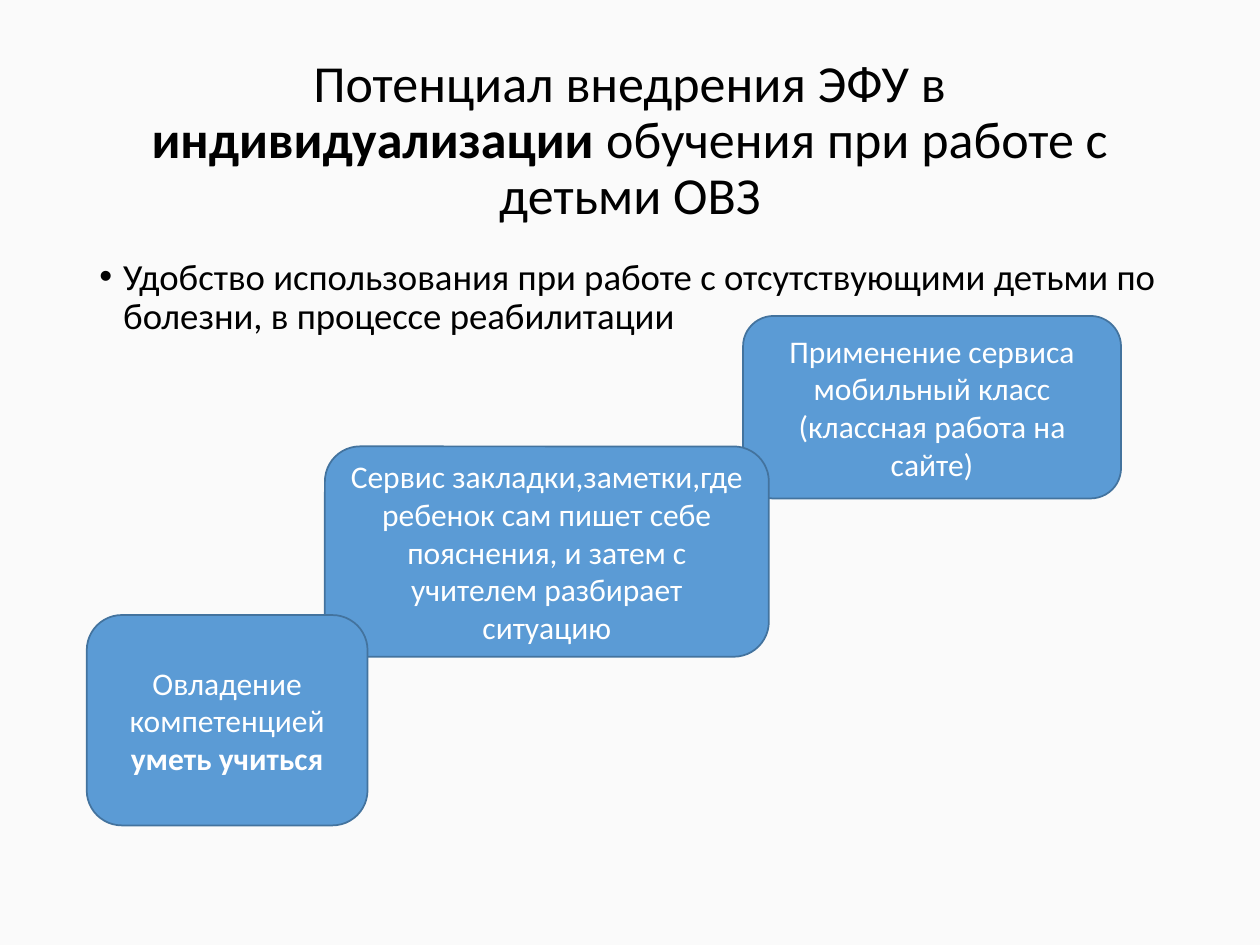
from dataclasses import dataclass

from lxml.etree import SubElement
from pptx import Presentation
from pptx.dml.color import RGBColor
from pptx.enum.shapes import MSO_SHAPE as Preset
from pptx.enum.text import MSO_ANCHOR as Anchor, MSO_AUTO_SIZE as AutoSize, PP_ALIGN as Align
from pptx.oxml.ns import qn
from pptx.util import Cm, Pt


@dataclass(frozen=True)
class Theme:
    font: str = "Calibri"
    background: RGBColor = RGBColor(0xFA, 0xFA, 0xFA)
    ink: RGBColor = RGBColor(0, 0, 0)
    step_fill: RGBColor = RGBColor(0x5B, 0x9B, 0xD5)
    step_line: RGBColor = RGBColor(0x43, 0x73, 0x9E)
    step_ink: RGBColor = RGBColor(0xFF, 0xFF, 0xFF)
    title_size: float = 29.7
    body_size: float = 21
    step_size: float = 18


@dataclass(frozen=True)
class Box:
    """Position and size in centimetres."""
    left: float
    top: float
    width: float
    height: float


@dataclass(frozen=True)
class Step:
    box: Box
    text: str
    emphasis: str = ""


THEME = Theme()
MARGIN = 1.75
CONTENT_WIDTH = 25.4 - 2 * MARGIN
BULLET_INDENT = 0.48

STEPS = [
    Step(Box(14.98, 6.37, 7.62, 3.68),
         "Применение сервиса мобильный класс (классная работа на сайте)"),
    Step(Box(6.55, 9, 8.95, 4.24),
         "Сервис закладки,заметки,где ребенок сам пишет себе пояснения, "
         "и затем с учителем разбирает ситуацию"),
    Step(Box(MARGIN, 12.4, 5.66, 4.24), "Овладение компетенцией ", "уметь учиться"),
]


def place(shape, box: Box) -> None:
    shape.left, shape.top = Cm(box.left), Cm(box.top)
    shape.width, shape.height = Cm(box.width), Cm(box.height)


def write(frame, parts: list[str], size: float, color: RGBColor, align: Align, anchor: Anchor):
    """Fill the frame with one paragraph in which every second part is bold."""
    frame.word_wrap = True
    frame.auto_size = AutoSize.NONE
    frame.vertical_anchor = anchor
    paragraph = frame.paragraphs[0]
    paragraph.alignment = align
    paragraph.space_before = Pt(0)
    for index, part in enumerate(filter(None, parts)):
        run = paragraph.add_run()
        run.text = part
        run.font.name = THEME.font
        run.font.size = Pt(size)
        run.font.bold = index % 2 == 1
        run.font.color.rgb = color
    return paragraph


def add_bullet(paragraph, indent: float) -> None:
    properties = paragraph._p.get_or_add_pPr()
    properties.set("marL", str(Cm(indent)))
    properties.set("indent", str(-Cm(indent)))
    SubElement(properties, qn("a:buFont")).set("typeface", "Arial")
    SubElement(properties, qn("a:buChar")).set("char", "•")


def draw_step(slide, step: Step) -> None:
    shape = slide.shapes.add_shape(Preset.ROUNDED_RECTANGLE, 0, 0, 0, 0)
    place(shape, step.box)
    shape.shadow.inherit = False
    shape.fill.solid()
    shape.fill.fore_color.rgb = THEME.step_fill
    shape.line.color.rgb = THEME.step_line
    shape.line.width = Pt(1)
    write(shape.text_frame, [step.text, step.emphasis], THEME.step_size,
          THEME.step_ink, Align.CENTER, Anchor.MIDDLE)


def main() -> None:
    deck = Presentation()
    deck.slide_width, deck.slide_height = Cm(25.4), Cm(19.05)
    slide = deck.slides.add_slide(deck.slide_layouts[1])
    slide.background.fill.solid()
    slide.background.fill.fore_color.rgb = THEME.background

    title, body = slide.placeholders
    place(title, Box(MARGIN, 1.02, CONTENT_WIDTH, 3.68))
    heading = write(
        title.text_frame,
        ["Потенциал внедрения ЭФУ в ", "индивидуализации", " обучения при работе с детьми ОВЗ"],
        THEME.title_size, THEME.ink, Align.CENTER, Anchor.MIDDLE)
    heading.line_spacing = 0.9

    place(body, Box(MARGIN, 5.08, CONTENT_WIDTH, 12.09))
    benefit = write(
        body.text_frame,
        ["Удобство использования при работе с отсутствующими детьми по болезни, "
         "в процессе реабилитации"],
        THEME.body_size, THEME.ink, Align.LEFT, Anchor.TOP)
    benefit.line_spacing = 0.9
    add_bullet(benefit, BULLET_INDENT)

    for step in STEPS:
        draw_step(slide, step)
    deck.save("out.pptx")


if __name__ == "__main__":
    main()
